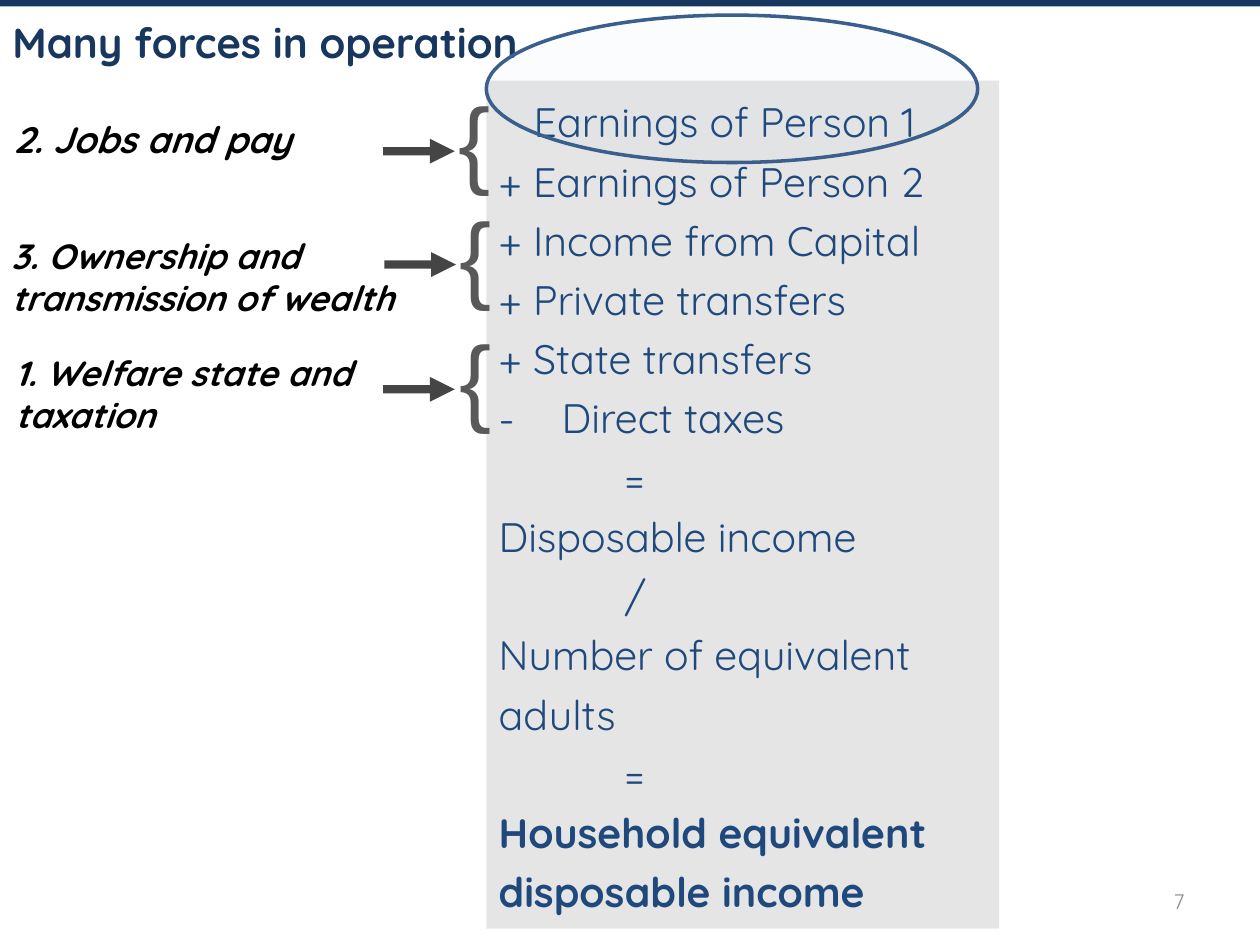
from lxml.etree import SubElement
from pptx import Presentation
from pptx.dml.color import RGBColor
from pptx.enum.shapes import MSO_CONNECTOR, MSO_SHAPE
from pptx.enum.text import MSO_ANCHOR, PP_ALIGN
from pptx.oxml.ns import qn
from pptx.util import Pt

NAVY = "17375E"
BLUE = "1F497D"
BODY_FONT = "Quicksand"
INCOME_LINES = [
    ("Earnings of Person 1", 20, False),
    ("+ Earnings of Person 2", 0, False),
    ("+ Income from Capital", 0, False),
    ("+ Private transfers", 0, False),
    ("+ State transfers", 0, False),
    ("-\tDirect taxes", 0, False),
    ("=", 72, False),
    ("Disposable income", 0, False),
    ("/", 72, False),
    ("Number of equivalent adults", 0, False),
    ("=", 72, False),
    ("Household equivalent disposable income", 0, True),
]
FORCES = [
    ("2. Jobs and pay", 21, (0.72, 63.36, 246.96, 47.52), (254.88, 42.48), (218.88, 86.4)),
    ("3. Ownership and transmission of wealth", 20, (-0.72, 130.32, 251.28, 55.44), (255.6, 108), (219.6, 151.2)),
    ("1. Welfare state and taxation", 20, (1.44, 197.28, 251.28, 55.44), (255.6, 178.56), (218.88, 222.48)),
]


def color(hex_code):
    return RGBColor.from_string(hex_code)


def points(*lengths):
    return [Pt(length) for length in lengths]


def set_alpha(fill_owner, percent):
    for tone in fill_owner.iter(qn("a:srgbClr")):
        SubElement(tone, qn("a:alpha"), val=str(percent * 1000))


def add_run(paragraph, text, size, tone, font=BODY_FONT, bold=False, italic=False):
    run = paragraph.add_run()
    run.text = text
    run.font.name = font
    run.font.size = Pt(size)
    run.font.bold = bold
    run.font.italic = italic
    run.font.color.rgb = color(tone)
    return run


def add_label(slide, box, text, size, tone, **style):
    label = slide.shapes.add_textbox(*points(*box))
    label.text_frame.word_wrap = True
    run = add_run(label.text_frame.paragraphs[0], text, size, tone, **style)
    return label.text_frame, run


def add_panel(slide, preset, box, tone):
    panel = slide.shapes.add_shape(preset, *points(*box))
    panel.shadow.inherit = False
    panel.fill.solid()
    panel.fill.fore_color.rgb = color(tone)
    panel.line.fill.background()
    return panel


def add_header(slide, box):
    left, top, width, height = box
    add_panel(slide, MSO_SHAPE.RECTANGLE, (left, top, width, 3.6), NAVY)
    add_label(slide, (left, top + 5.76, 490.32, height - 5.76),
              "Many forces in operation", 24, NAVY, bold=True)


def add_page_number(slide, box):
    frame, _ = add_label(slide, box, "7", 12, "8C8C8C")
    frame.vertical_anchor = MSO_ANCHOR.MIDDLE
    frame.paragraphs[0].alignment = PP_ALIGN.RIGHT


def add_income_equation(slide, box):
    frame = add_panel(slide, MSO_SHAPE.RECTANGLE, box, "E5E5E5").text_frame
    frame.word_wrap = True
    frame.vertical_anchor = MSO_ANCHOR.TOP
    for index, (text, indent, bold) in enumerate(INCOME_LINES):
        paragraph = frame.add_paragraph() if index else frame.paragraphs[0]
        paragraph.alignment = PP_ALIGN.LEFT
        paragraph.line_spacing = 1.2
        properties = paragraph._p.get_or_add_pPr()
        properties.set("marL", str(Pt(indent)))
        properties.set("indent", "0")
        if "\t" in text:
            stops = SubElement(properties, qn("a:tabLst"))
            SubElement(stops, qn("a:tab"), pos=str(Pt(22)), algn="l")
        add_run(paragraph, text, 23.5, BLUE, bold=bold)


def add_arrow(slide, start, length):
    left, top = start
    arrow = slide.shapes.add_connector(
        MSO_CONNECTOR.STRAIGHT, *points(left, top, left + length, top))
    arrow.line.width = Pt(4.75)
    arrow.line.color.rgb = color("000000")
    outline = arrow.line._get_or_add_ln()
    set_alpha(outline, 73)
    SubElement(outline, qn("a:tailEnd"), type="triangle")
    SubElement(arrow._element.spPr, qn("a:effectLst"))


def add_force(slide, box, text, size, brace_at, arrow_at):
    add_label(slide, box, text, size, "000000", bold=True, italic=True)
    _, brace = add_label(slide, (*brace_at, 26.64, 74.16), "{", 55, "595959", font="Arial")
    brace.font._element.set("spc", "-300")
    add_arrow(slide, arrow_at, 41.04)


def add_highlight(slide, box):
    highlight = add_panel(slide, MSO_SHAPE.OVAL, box, "4F81BD")
    set_alpha(highlight._element.spPr, 2)
    highlight.line.color.rgb = color("3A5F8C")
    highlight.line.width = Pt(2)


def main():
    deck = Presentation()
    deck.slide_width, deck.slide_height = points(720, 540)
    slide = deck.slides.add_slide(deck.slide_layouts[6])
    add_header(slide, (0, 0, 720, 41.76))
    add_page_number(slide, (516.24, 500.4, 167.76, 28.8))
    add_income_equation(slide, (277.92, 46.08, 293.04, 484.56))
    for text, size, box, brace_at, arrow_at in FORCES:
        add_force(slide, box, text, size, brace_at, arrow_at)
    add_highlight(slide, (277.92, 8.64, 280.8, 84.24))
    deck.save("out.pptx")


if __name__ == "__main__":
    main()
